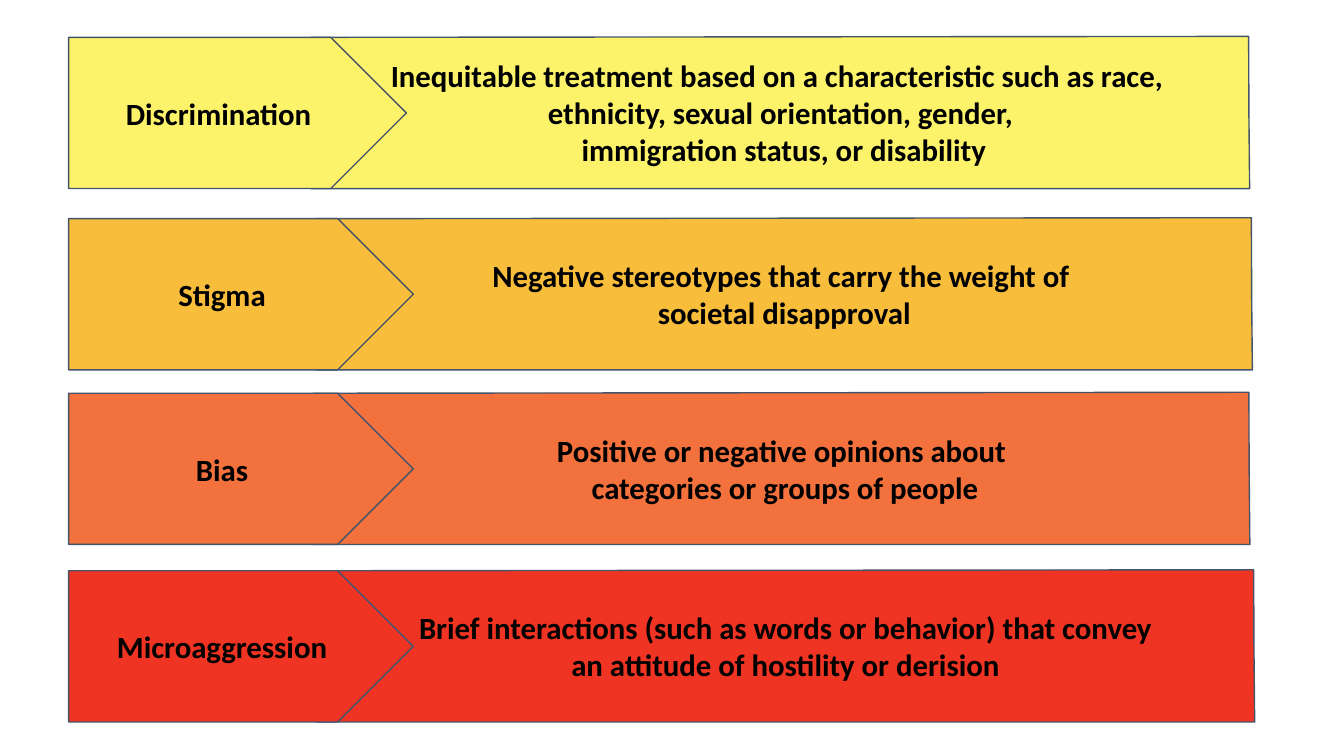
"""Build a slide of four labelled banners defining forms of prejudice."""
from pptx import Presentation
from pptx.dml.color import RGBColor
from pptx.enum.shapes import MSO_SHAPE as Preset
from pptx.enum.text import MSO_ANCHOR as Anchor, PP_ALIGN as Align
from pptx.util import Pt

COLOURS = {
    "yellow": "FCF36A",
    "amber": "F8BD3B",
    "orange": "F2713C",
    "red": "EF3423",
    "outline": "44546A",
    "text": "000000",
}
LABEL_LEFT = 49
ROW_HEIGHT = 108
ROWS = [
    ("Discrimination", "yellow", 26, 241.2, 222.3, 670.3,
     ["Inequitable treatment based on a characteristic such as race, ",
      "ethnicity, sexual orientation, gender,",
      " immigration status, or disability"]),
    ("Stigma", "amber", 155.5, 246.2, 225.9, 668.7,
     ["Negative stereotypes that carry the weight of ",
      "societal disapproval"]),
    ("Bias", "orange", 280.2, 246.2, 223.7, 669.1,
     ["Positive or negative opinions about",
      " categories or groups of people"]),
    ("Microaggression", "red", 407, 246.2, 225.9, 670.3,
     ["Brief interactions (such as words or behavior) that convey",
      "an attitude of hostility or derision"]),
]


def colour(name):
    return RGBColor.from_string(COLOURS[name])


def write_text(shape, lines, size=22, bold=True, font="Calibri", ink="text"):
    frame = shape.text_frame
    frame.word_wrap = True
    frame.vertical_anchor = Anchor.MIDDLE
    for index, line in enumerate(lines):
        paragraph = frame.add_paragraph() if index else frame.paragraphs[0]
        paragraph.alignment = Align.CENTER
        run = paragraph.add_run()
        run.text = line
        run.font.name = font
        run.font.size = Pt(size)
        run.font.bold = bold
        run.font.color.rgb = colour(ink)


def paint(shape, fill):
    shape.shadow.inherit = False
    shape.fill.solid()
    shape.fill.fore_color.rgb = colour(fill)
    shape.line.color.rgb = colour("outline")
    shape.line.width = Pt(1)


def add_banner(slide, left, top, width, fill, lines):
    bottom = ROW_HEIGHT + 0.7
    outline = [(0, 0.7), (width - 0.7, 0), (width - 0.5, 56), (width, bottom),
               (0, bottom), (68, 54.7), (24, 18)]
    points = [(Pt(left + x), Pt(top + y)) for x, y in outline]
    builder = slide.shapes.build_freeform(*points[0])
    builder.add_line_segments(points[1:], close=True)
    banner = builder.convert_to_shape()
    paint(banner, fill)
    write_text(banner, lines)


def add_label(slide, top, width, fill, text):
    label = slide.shapes.add_shape(
        Preset.PENTAGON, Pt(LABEL_LEFT), Pt(top), Pt(width), Pt(ROW_HEIGHT))
    paint(label, fill)
    write_text(label, [text])


def main():
    presentation = Presentation()
    presentation.slide_width = Pt(960)
    presentation.slide_height = Pt(540)
    slide = presentation.slides.add_slide(presentation.slide_layouts[6])
    for term, fill, top, label_width, left, width, definition in ROWS:
        add_banner(slide, left, top, width, fill, definition)
        add_label(slide, top + 0.7, label_width, fill, term)
    presentation.save("out.pptx")


if __name__ == "__main__":
    main()
